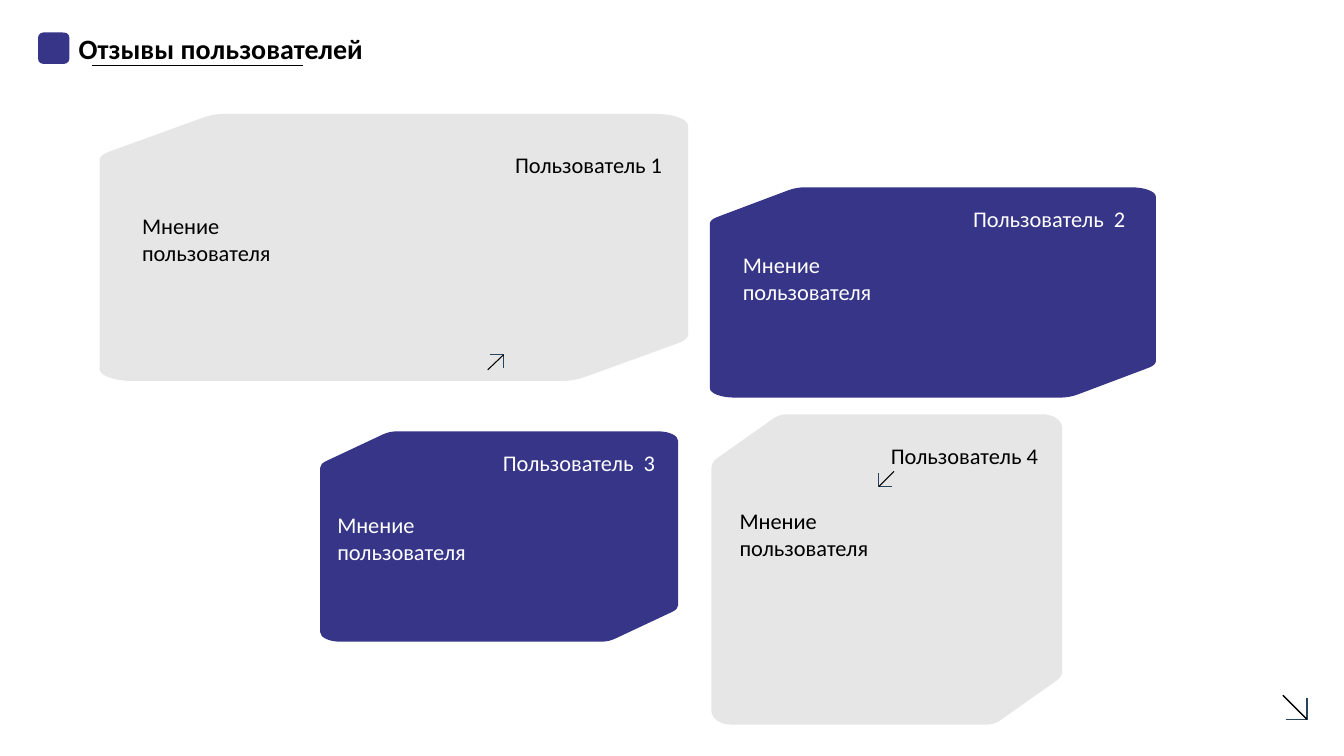
"""Builds the user reviews slide."""
from lxml import etree
from pptx import Presentation
from pptx.dml.color import RGBColor
from pptx.enum.shapes import MSO_CONNECTOR, MSO_SHAPE
from pptx.enum.text import MSO_ANCHOR, MSO_AUTO_SIZE, PP_ALIGN
from pptx.oxml.ns import qn
from pptx.util import Cm, Pt

STRAIGHT = MSO_CONNECTOR.STRAIGHT
ROUNDED = MSO_SHAPE.ROUNDED_RECTANGLE
TOP, MIDDLE, BOTTOM = MSO_ANCHOR.TOP, MSO_ANCHOR.MIDDLE, MSO_ANCHOR.BOTTOM
LEFT, RIGHT = PP_ALIGN.LEFT, PP_ALIGN.RIGHT
NO_AUTOFIT = MSO_AUTO_SIZE.NONE

INDIGO = RGBColor(0x37, 0x35, 0x88)
GREY = RGBColor(0xE6, 0xE6, 0xE6)
SLATE = RGBColor(0x28, 0x44, 0x5D)
BLACK = RGBColor(0, 0, 0)
WHITE = RGBColor(0xFF, 0xFF, 0xFF)

TITLE_ONLY = 5
TITLE = "Отзывы пользователей"
OPINION = "Мнение пользователя"
OPINION_SIZE = (5.72, 2.21)
HEADING_HEIGHT = 2.59
ARM_RATIO = 0.88

OUTLINE_START = (100, 4.5)
HALF_OUTLINE = [
    [(100, 82.7)],
    [(100, 83.9), (99.4, 85), (98.4, 85.8)],
    [(82.5, 98.5)],
    [(81.4, 99.4), (80, 100), (78.6, 100)],
    [(5.6, 100)],
    [(2.5, 100), (0, 98), (0, 95.5)],
]

REVIEWS = [
    ("Пользователь 1", GREY, BLACK, (2.51, 2.87, 14.83, 6.73), (11.73, 3.34, 5.21), (3.33, 4.62)),
    ("Пользователь  2", INDIGO, WHITE, (17.89, 4.72, 11.24, 5.3), (23.07, 4.71, 5.54), (18.47, 5.61)),
    ("Пользователь  3", INDIGO, WHITE, (8.07, 10.87, 9.02, 5.3), (11.04, 10.86, 5.72), (8.25, 12.16)),
    ("Пользователь 4", GREY, BLACK, (17.93, 10.44, 8.84, 7.82), (21.3, 10.67, 5.11), (18.39, 12.06)),
]

ARROWS = [
    ((32.33, 17.52), (32.94, 18.13), 1),
    ((22.53, 11.88), (22.15, 12.26), 0.75),
    ((12.29, 9.32), (12.69, 8.94), 0.75),
]


def apply_format(target, values):
    """Set every attribute in values on target."""
    for attribute, value in values.items():
        setattr(target, attribute, value)


def write_text(holder, text, color, size, bold=False, frame=None, paragraph=None):
    """Write one formatted paragraph into a text holder."""
    text_frame = holder.text_frame
    text_frame.text = text
    line = text_frame.paragraphs[0]
    apply_format(text_frame, {"word_wrap": True, "auto_size": NO_AUTOFIT, **(frame or {})})
    apply_format(line, paragraph or {})
    font = line.runs[0].font
    apply_format(font, {"name": "Calibri", "size": Pt(size), "bold": bold})
    font.color.rgb = color


def add_outline(slide, points, close):
    """Draw an outline through points given in centimetres."""
    vertices = [(Cm(x), Cm(y)) for x, y in points]
    builder = slide.shapes.build_freeform(*vertices[0])
    builder.add_line_segments(vertices[1:], close=close)
    outline = builder.convert_to_shape()
    outline.shadow.inherit = False
    return outline


def round_corners(outline, edges):
    """Turn each run of three points into one cubic curve."""
    segments = iter(list(outline.element.iter(qn("a:lnTo"))))
    for edge in edges:
        steps = [next(segments) for _ in edge]
        if len(steps) == 3:
            curve = etree.Element(qn("a:cubicBezTo"))
            steps[0].addprevious(curve)
            for step in steps:
                curve.append(step[0])
                step.getparent().remove(step)


def add_card(slide, box, color):
    """Draw a card with two cut corners, symmetric about its centre."""
    left, top, width, height = box
    edges = HALF_OUTLINE + [[(100 - x, 100 - y) for x, y in edge] for edge in HALF_OUTLINE]
    points = [OUTLINE_START] + [point for edge in edges for point in edge]
    card = add_outline(
        slide, [(left + x * width / 100, top + y * height / 100) for x, y in points], True)
    round_corners(card, edges)
    card.fill.solid()
    card.fill.fore_color.rgb = color
    card.line.fill.background()


def add_label(slide, box, text, color, frame, paragraph):
    """Add a text box on a card."""
    label = slide.shapes.add_textbox(*map(Cm, box))
    write_text(label, text, color, 16, frame=frame,
               paragraph={"space_before": Pt(10), **paragraph})


def add_review(slide, user, fill, ink, card_box, heading_box, opinion_at):
    """Add one review: card, user name and opinion."""
    add_card(slide, card_box, fill)
    add_label(slide, (*heading_box, HEADING_HEIGHT), user, ink,
              {"vertical_anchor": TOP}, {"alignment": RIGHT, "line_spacing": 1.5})
    add_label(slide, (*opinion_at, *OPINION_SIZE), OPINION, ink,
              {"vertical_anchor": BOTTOM}, {"alignment": LEFT})


def add_rule(slide, start, end, width):
    """Draw a straight black line."""
    rule = slide.shapes.add_connector(STRAIGHT, *map(Cm, (*start, *end)))
    rule.line.color.rgb = BLACK
    rule.line.width = Pt(width)
    etree.SubElement(rule.element.spPr, qn("a:effectLst"))


def add_arrow(slide, tail, tip, width):
    """Draw a diagonal arrow with a right-angled head."""
    tip_x, tip_y = tip
    arm_x = tip_x - ARM_RATIO * (tip_x - tail[0])
    arm_y = tip_y - ARM_RATIO * (tip_y - tail[1])
    head = add_outline(slide, [(arm_x, tip_y), tip, (tip_x, arm_y)], False)
    head.fill.background()
    head.line.color.rgb = SLATE
    head.line.width = Pt(width)
    add_rule(slide, tail, tip, width)


def add_header(slide):
    """Format the rounded title with its square marker and underline."""
    marker = slide.shapes.add_shape(ROUNDED, Cm(0.96), Cm(0.82), Cm(0.79), Cm(0.79))
    marker.shadow.inherit = False
    marker.fill.solid()
    marker.fill.fore_color.rgb = INDIGO
    marker.line.fill.background()
    title = slide.shapes.title
    apply_format(title, {"left": Cm(1.73), "top": Cm(0.85), "width": Cm(9.75), "height": Cm(0.74)})
    geometry = etree.SubElement(title.element.spPr, qn("a:prstGeom"), prst="roundRect")
    adjustments = etree.SubElement(geometry, qn("a:avLst"))
    etree.SubElement(adjustments, qn("a:gd"), name="adj", fmla="val 50000")
    write_text(title, TITLE, BLACK, 20, bold=True,
               frame={"vertical_anchor": MIDDLE}, paragraph={"alignment": LEFT})
    add_rule(slide, (2.33, 1.65), (7.63, 1.65), 0.5)


def main():
    """Build and save the slide."""
    presentation = Presentation()
    apply_format(presentation, {"slide_width": Cm(33.87), "slide_height": Cm(19.05)})
    slide = presentation.slides.add_slide(presentation.slide_layouts[TITLE_ONLY])
    add_header(slide)
    for review in REVIEWS:
        add_review(slide, *review)
    for arrow in ARROWS:
        add_arrow(slide, *arrow)
    presentation.save("out.pptx")


if __name__ == "__main__":
    main()
